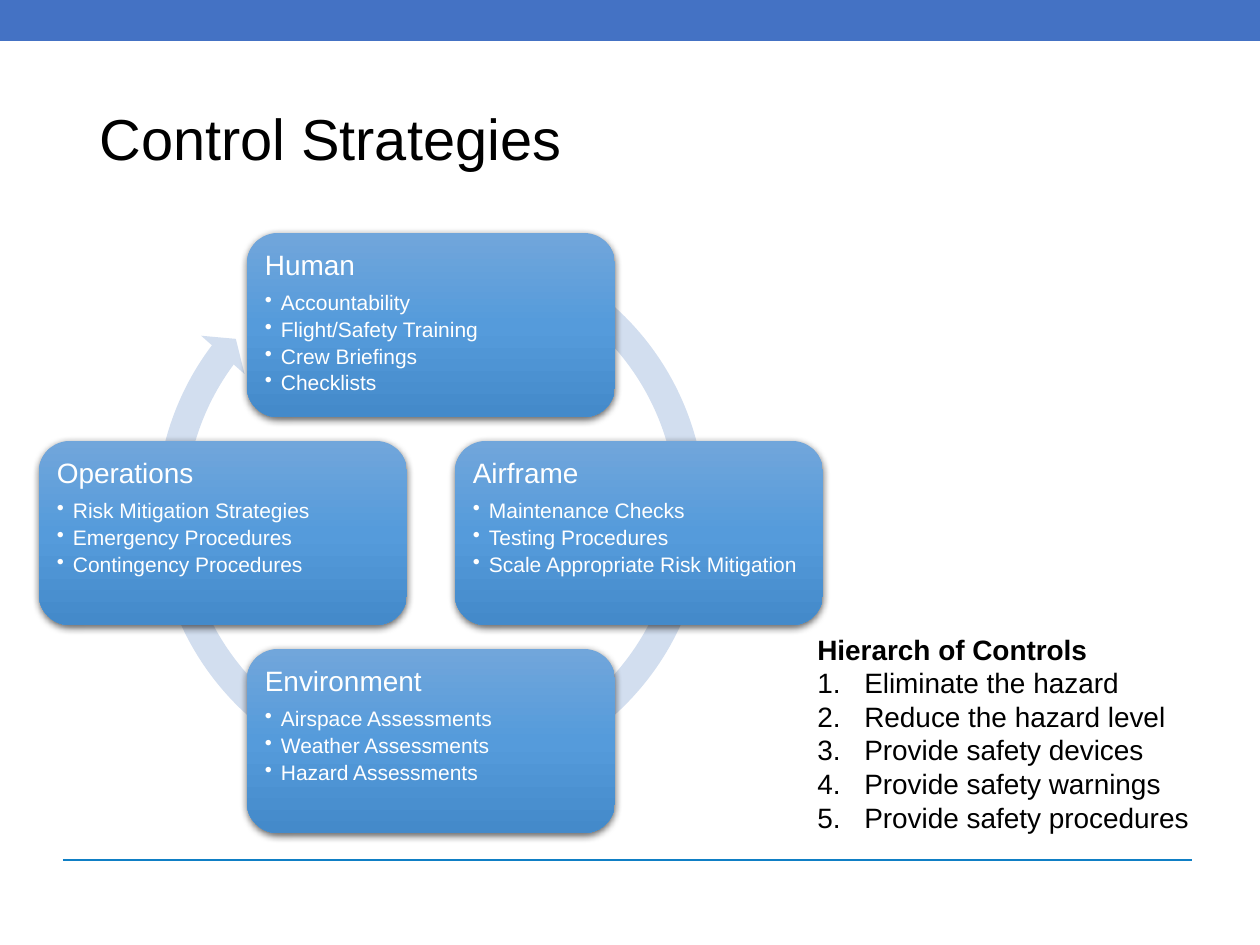
from lxml import etree
from pptx import Presentation
from pptx import util as u
from pptx.dml.color import RGBColor
from pptx.enum import shapes, text
from pptx.oxml import ns

PX = 914400 // 126  # EMU per pixel
FONT = "Arial"
BLACK = RGBColor(0x00, 0x00, 0x00)
WHITE = RGBColor(0xFF, 0xFF, 0xFF)
BAND_BLUE = RGBColor(0x44, 0x72, 0xC4)
RULE_BLUE = RGBColor(0x0F, 0x7F, 0xC5)
RING_BLUE = RGBColor(0xD2, 0xDE, 0xEF)
CARD_STOPS = (
    (0, RGBColor(0x71, 0xA6, 0xDB)),
    (50, RGBColor(0x55, 0x9B, 0xDB)),
    (100, RGBColor(0x44, 0x8A, 0xCA)),
)

# Heading, bullets and place (column, row) around the ring's centre
STRATEGIES = (
    ("Human", ("Accountability", "Flight/Safety Training", "Crew Briefings",
               "Checklists"), (0, -1)),
    ("Airframe", ("Maintenance Checks", "Testing Procedures",
                  "Scale Appropriate Risk Mitigation"), (1, 0)),
    ("Environment", ("Airspace Assessments", "Weather Assessments",
                     "Hazard Assessments"), (0, 1)),
    ("Operations", ("Risk Mitigation Strategies", "Emergency Procedures",
                    "Contingency Procedures"), (-1, 0)),
)
CONTROLS = ("Eliminate the hazard", "Reduce the hazard level",
            "Provide safety devices", "Provide safety warnings",
            "Provide safety procedures")


def emu(*lengths):
    return [length * PX for length in lengths]


def child(parent, tag, **attributes):
    element = etree.SubElement(parent, ns.qn(tag))
    for name, value in attributes.items():
        element.set(name, str(value))
    return element


def add_text(frame, words, size=16, color=BLACK, bold=False, line_spacing=None,
             space_after=None, indent=0, bullet=None):
    """Add one paragraph; bullet is a tag with its attributes."""
    paragraph = frame.paragraphs[0]
    if paragraph.runs:
        paragraph = frame.add_paragraph()
    paragraph.alignment = text.PP_ALIGN.LEFT
    if line_spacing:
        paragraph.line_spacing = line_spacing
    if space_after:
        paragraph.space_after = u.Pt(space_after)
    if bullet:
        tag, attributes = bullet
        properties = paragraph._p.get_or_add_pPr()
        properties.set("marL", str(indent * PX))
        properties.set("indent", str(-indent * PX))
        child(properties, tag, **attributes)
    run = paragraph.add_run()
    run.text = words
    run.font.name = FONT
    run.font.size = u.Pt(size)
    run.font.bold = bold
    run.font.color.rgb = color


def add_plain_shape(parent, kind, box, color):
    shape = parent.add_shape(kind, *emu(*box))
    shape.shadow.inherit = False
    shape.line.fill.background()
    shape.fill.solid()
    shape.fill.fore_color.rgb = color
    return shape


def add_frame(slide):
    """Top band and bottom rule."""
    add_plain_shape(slide.shapes, shapes.MSO_SHAPE.RECTANGLE,
                    (0, 0, 1260, 41), BAND_BLUE)
    rule = slide.shapes.add_connector(shapes.MSO_CONNECTOR.STRAIGHT,
                                      *emu(63, 860, 1192, 860))
    rule.line.color.rgb = RULE_BLUE
    rule.line.width = u.Pt(1.5)
    child(rule._element.spPr, "a:effectLst")


def add_title(slide, box):
    frame = slide.shapes.add_textbox(*emu(*box)).text_frame
    frame.word_wrap = True
    frame.vertical_anchor = text.MSO_ANCHOR.MIDDLE
    add_text(frame, "Control Strategies", size=33, line_spacing=0.9)


def add_card(parent, box, heading, bullets):
    """Rounded card with a gradient, a soft shadow, a heading and bullets."""
    card = add_plain_shape(parent, shapes.MSO_SHAPE.ROUNDED_RECTANGLE, box, WHITE)
    card.fill.gradient()
    card.fill.gradient_angle = 270
    properties = card._element.spPr
    stops = properties.find(".//" + ns.qn("a:gsLst"))
    for stop in list(stops):
        stops.remove(stop)
    for percent, color in CARD_STOPS:
        stop = child(stops, "a:gs", pos=percent * 1000)
        child(stop, "a:srgbClr", val=color)
    shadow = child(properties.find(ns.qn("a:effectLst")), "a:outerShdw",
                   blurRad=u.Pt(4.5), dist=u.Pt(1.5), dir=90 * 60000,
                   rotWithShape=0)
    child(child(shadow, "a:srgbClr", val=BLACK), "a:alpha", val=63000)

    frame = card.text_frame
    frame.word_wrap = True
    frame.vertical_anchor = text.MSO_ANCHOR.TOP
    frame.margin_left = frame.margin_right = 9 * PX
    frame.margin_top = frame.margin_bottom = 9 * PX
    add_text(frame, heading, color=WHITE, line_spacing=0.9, space_after=6.3)
    for words in bullets:
        add_text(frame, words, size=12, color=WHITE, line_spacing=0.9,
                 space_after=2.4, indent=16,
                 bullet=("a:buChar", {"char": "•"}))


def add_cycle(slide, box):
    """Ring arrow with one card on each of its four sides."""
    left, top, width, height = box
    card_width, card_height, step = 368, 184, 208
    ring_size = 578
    group = slide.shapes.add_group_shape().shapes
    ring = add_plain_shape(
        group, shapes.MSO_SHAPE.CIRCULAR_ARROW,
        (left + (width - ring_size) // 2, top - 11, ring_size, ring_size),
        RING_BLUE)
    for index, value in enumerate((0.05, 2.73, 130.12, 179.09, 0.05)):
        ring.adjustments[index] = value
    for heading, bullets, (column, row) in STRATEGIES:
        card_left = left + (width - card_width) // 2 + column * step
        card_top = top + (height - card_height) // 2 + row * step
        add_card(group, (card_left, card_top, card_width, card_height),
                 heading, bullets)


def add_controls(slide, box):
    """Numbered list of controls."""
    frame = slide.shapes.add_textbox(*emu(*box)).text_frame
    frame.word_wrap = True
    frame.auto_size = text.MSO_AUTO_SIZE.SHAPE_TO_FIT_TEXT
    add_text(frame, "Hierarch of Controls", bold=True)
    for words in CONTROLS:
        add_text(frame, words, indent=47,
                 bullet=("a:buAutoNum", {"type": "arabicPeriod"}))


def main():
    presentation = Presentation()
    presentation.slide_width, presentation.slide_height = u.Inches(10), u.Inches(7.5)
    slide = presentation.slides.add_slide(presentation.slide_layouts[6])
    add_frame(slide)
    add_title(slide, (87, 50, 1086, 183))
    add_cycle(slide, (39, 233, 784, 600))
    add_controls(slide, (805, 626, 402, 217))
    presentation.save("out.pptx")


if __name__ == "__main__":
    main()
